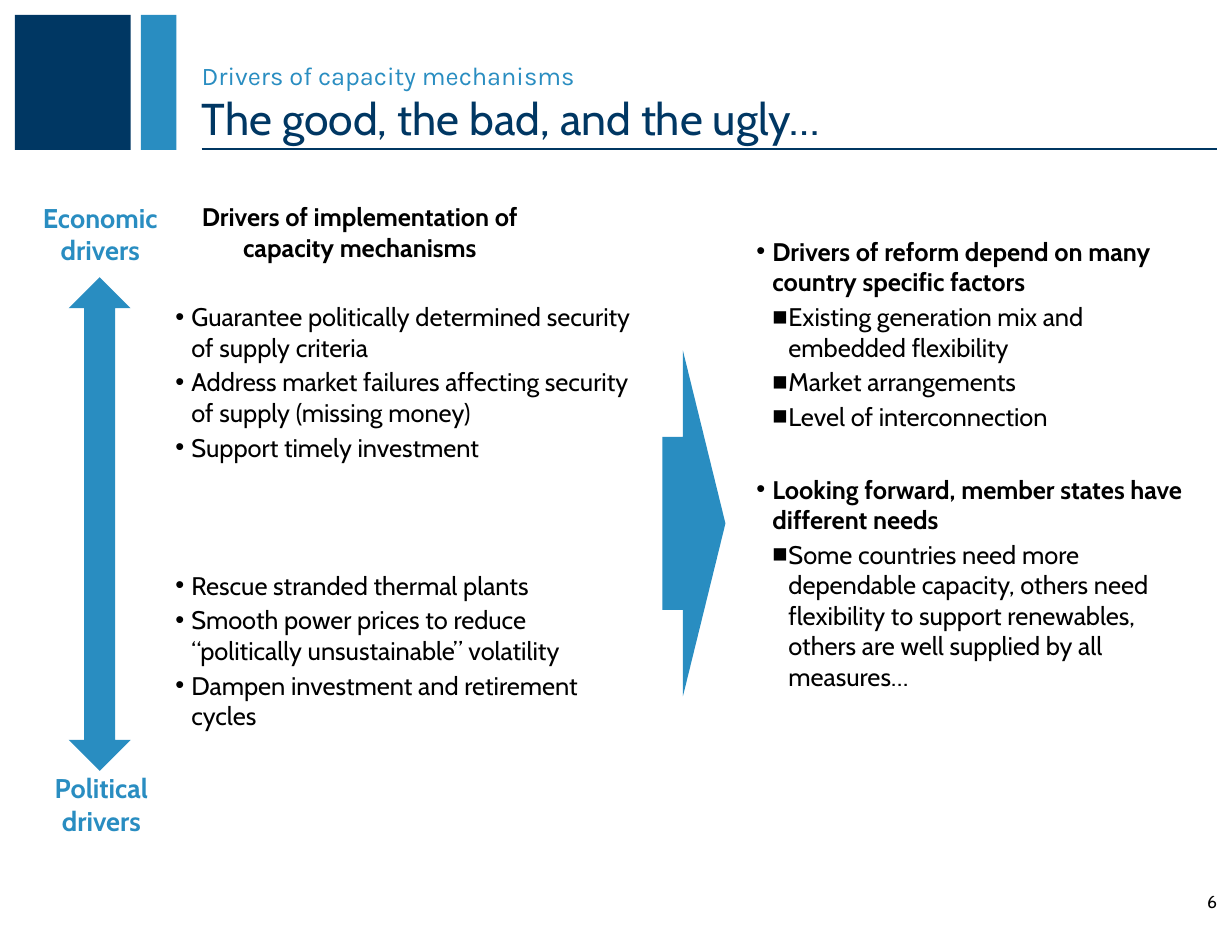
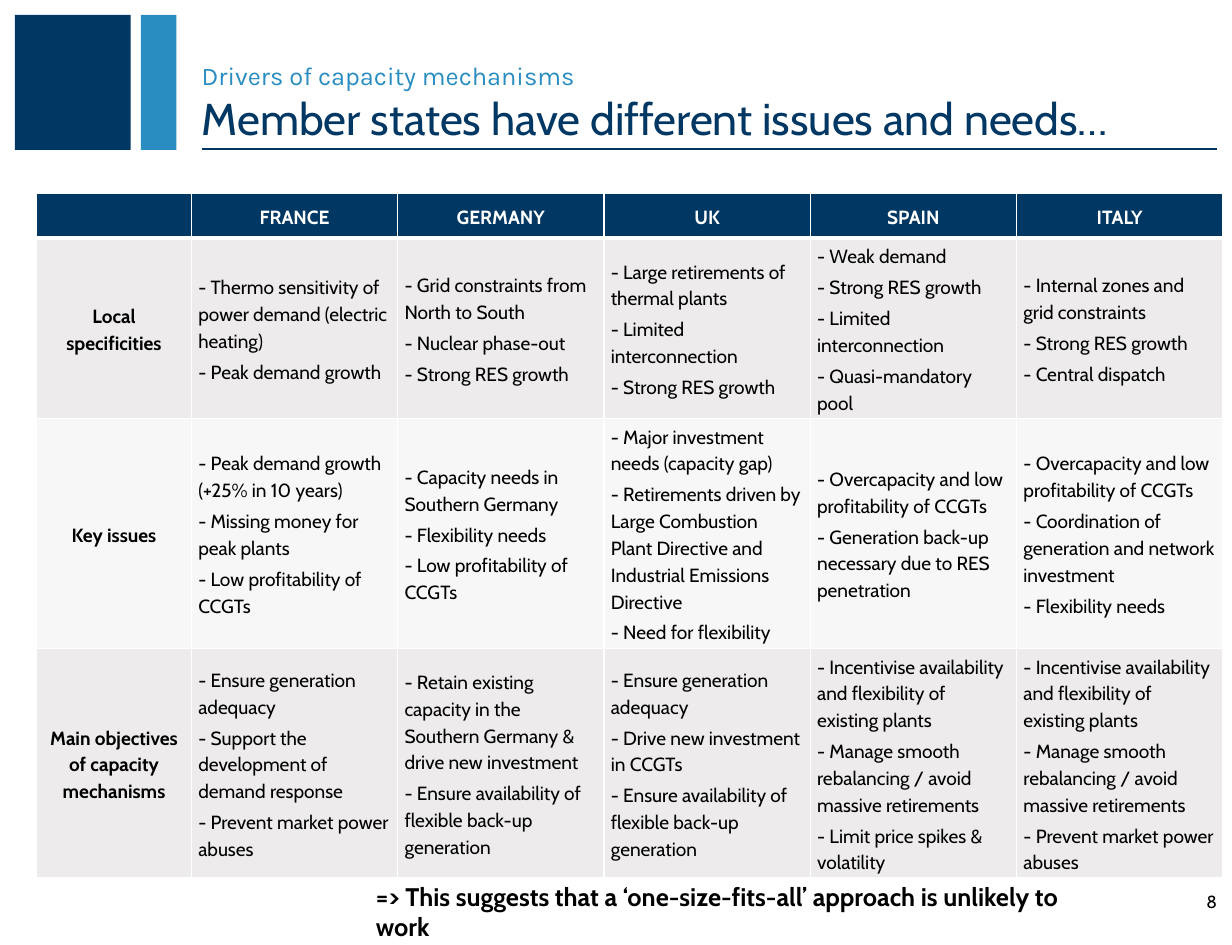
"""Build two slides on the drivers of capacity mechanisms."""
from dataclasses import dataclass

from lxml import etree
from pptx import Presentation
from pptx.dml.color import RGBColor
from pptx.enum import shapes, text
from pptx.oxml import ns
from pptx.util import Emu, Pt

PX = 9144


@dataclass(frozen=True)
class Theme:
    """Colours, fonts and type sizes."""
    navy: str = "003763"
    rule: str = "003661"
    blue: str = "298DC1"
    black: str = "000000"
    white: str = "FFFFFF"
    stripe: str = "D2CFCD"
    font: str = "Cabin"
    section_font: str = "Karla"
    title_size: int = 28
    label_size: int = 17
    body_size: int = 16
    table_size: int = 12
    number_size: int = 11
    gap: float = 2.6


THEME = Theme()
ALIGN, ANCHOR, SHAPE = text.PP_ALIGN, text.MSO_ANCHOR, shapes.MSO_SHAPE

SECTION = "Drivers of capacity mechanisms"
BANDS = [((13, 13, 101, 118), THEME.navy), ((123, 13, 31, 118), THEME.blue)]
TITLE_AREA = (176, 13, 886, 118)
NUMBER_AREA = (1020, 775, 42, 27)
INSETS = (11, 5, 11, 5)

DRIVERS_TITLE = "The good, the bad, and the ugly…"
DRIVERS_HEADING = "Drivers of implementation of capacity mechanisms"
HEADING_AREA = (144, 171, 340, 117)
POLES = [("Economic drivers", (16, 171, 143, 70)),
         ("Political drivers", (26, 669, 125, 70))]
ARROWS = [(SHAPE.UP_DOWN_ARROW, (60, 242, 54, 431), (0.5, 0.5)),
          (SHAPE.RIGHT_ARROW, (578, 306, 55, 302), (0.5, 0.675))]
# Each bullet: level, text, bold, space before
IMPLEMENTATION = [
    (0, "Guarantee politically determined security of supply criteria", False, 0),
    (0, "Address market failures affecting security of supply (missing money)", False, THEME.gap),
    (0, "Support timely investment", False, THEME.gap),
    (0, "Rescue stranded thermal plants", False, 67.6),
    (0, "Smooth power prices to reduce “politically unsustainable” volatility", False, THEME.gap),
    (0, "Dampen investment and retirement cycles", False, THEME.gap),
]
REFORM = [
    (0, "Drivers of reform depend on many country specific factors", True, 0),
    (1, "Existing generation mix and embedded flexibility", False, THEME.gap),
    (1, "Market arrangements", False, THEME.gap),
    (1, "Level of interconnection", False, THEME.gap),
    (0, "Looking forward, member states have different needs", True, 26.5),
    (1, "Some countries need more dependable capacity, others need flexibility to support "
        "renewables, others are well supplied by all measures…", False, THEME.gap),
]
BULLET_AREAS = [((153, 263, 401, 498), IMPLEMENTATION), ((660, 206, 388, 559), REFORM)]
BULLETS = "•■"

STATES_TITLE = "Member states have different issues and needs…"
STATES = [
    ("", ["FRANCE"], ["GERMANY"], ["UK"], ["SPAIN"], ["ITALY"]),
    ("Local specificities",
     ["- Thermo sensitivity of power demand (electric heating)", "- Peak demand growth"],
     ["- Grid constraints from North to South", "- Nuclear phase-out", "- Strong RES growth"],
     ["- Large retirements of thermal plants", "- Limited interconnection",
      "- Strong RES growth"],
     ["- Weak demand", "- Strong RES growth", "- Limited interconnection",
      "- Quasi-mandatory pool"],
     ["- Internal zones and grid constraints", "- Strong RES growth", "- Central dispatch"]),
    ("Key issues",
     ["- Peak demand growth (+25% in 10 years)", "- Missing money for peak plants",
      "- Low profitability of CCGTs"],
     ["- Capacity needs in Southern Germany", "- Flexibility needs",
      "- Low profitability of CCGTs"],
     ["- Major investment needs (capacity gap)",
      "- Retirements driven by Large Combustion Plant Directive and Industrial Emissions Directive",
      "- Need for flexibility"],
     ["- Overcapacity and low profitability of CCGTs",
      "- Generation back-up necessary due to RES penetration"],
     ["- Overcapacity and low profitability of CCGTs",
      "- Coordination of generation and network investment", "- Flexibility needs"]),
    ("Main objectives of capacity mechanisms",
     ["- Ensure generation adequacy", "- Support the development of demand response",
      "- Prevent market power abuses"],
     ["- Retain existing capacity in the Southern Germany & drive new investment",
      "- Ensure availability of flexible back-up generation"],
     ["- Ensure generation adequacy", "- Drive new investment in CCGTs",
      "- Ensure availability of flexible back-up generation"],
     ["- Incentivise availability and flexibility of existing plants",
      "- Manage smooth rebalancing / avoid massive retirements",
      "- Limit price spikes & volatility"],
     ["- Incentivise availability and flexibility of existing plants",
      "- Manage smooth rebalancing / avoid massive retirements",
      "- Prevent market power abuses"]),
]
TABLE_ORIGIN = (32, 169)
COLUMNS = [135] + [180] * 5
ROWS = [39, 156, 201, 200]
ROW_OPACITY = [100, 40, 15, 40]
CONCLUSION = "=> This suggests that a ‘one-size-fits-all’ approach is unlikely to work"
CONCLUSION_AREA = (328, 769, 640, 56)


def emu(lengths):
    return [Emu(length * PX) for length in lengths]


def rgb(colour):
    return RGBColor.from_string(colour)


def add_xml(parent, tag, **attributes):
    return etree.SubElement(parent, ns.qn(tag), attributes)


def format_text(para, size, colour=THEME.black, bold=False, font=THEME.font):
    for span in para.runs:
        span.font.name, span.font.size, span.font.bold = font, Pt(size), bold
        span.font.color.rgb = rgb(colour)


def set_frame(frame, insets, anchor=ANCHOR.TOP):
    frame.word_wrap, frame.auto_size = True, text.MSO_AUTO_SIZE.NONE
    frame.vertical_anchor = anchor
    (frame.margin_left, frame.margin_top,
     frame.margin_right, frame.margin_bottom) = emu(insets)


def place(holder, area):
    holder.left, holder.top, holder.width, holder.height = emu(area)


def add_text(page, words, area, size, colour=THEME.black, bold=True,
             align=ALIGN.CENTER, insets=INSETS, anchor=ANCHOR.TOP):
    frame = page.shapes.add_textbox(*emu(area)).text_frame
    set_frame(frame, insets, anchor)
    para = frame.paragraphs[0]
    para.text, para.alignment = words, align
    format_text(para, size, colour, bold)


def add_block(page, kind, area, colour):
    block = page.shapes.add_shape(kind, *emu(area))
    block.shadow.inherit = False
    block.fill.solid()
    block.fill.fore_color.rgb = rgb(colour)
    block.line.fill.background()
    return block


def add_page(deck, layout, title, number):
    page = deck.slides.add_slide(deck.slide_layouts.get_by_name(layout))
    for area, colour in BANDS:
        add_block(page, SHAPE.RECTANGLE, area, colour)
    rule = page.shapes.add_connector(shapes.MSO_CONNECTOR.STRAIGHT, *emu((176, 130, 1062, 130)))
    rule.line.color.rgb, rule.line.width = rgb(THEME.rule), Pt(1)
    add_xml(rule.element.spPr, "a:effectLst")
    holder = page.shapes.title
    place(holder, TITLE_AREA)
    frame = holder.text_frame
    set_frame(frame, (0, 5, 0, 5), ANCHOR.BOTTOM)
    frame.text = f"{SECTION}\n{title}"
    section, headline = frame.paragraphs
    section.alignment = headline.alignment = ALIGN.LEFT
    format_text(section, THEME.body_size, THEME.blue, font=THEME.section_font)
    format_text(headline, THEME.title_size, THEME.navy)
    add_text(page, number, NUMBER_AREA, THEME.number_size, bold=False,
             align=ALIGN.RIGHT, insets=(0, 0, 0, 3), anchor=ANCHOR.MIDDLE)
    return page


def fill_bullets(holder, area, items):
    place(holder, area)
    frame = holder.text_frame
    set_frame(frame, (0, 0, 0, 0))
    frame.text = "\n".join(item[1] for item in items)
    for para, (level, _, bold, before) in zip(frame.paragraphs, items):
        para.level = level
        properties = para._p.get_or_add_pPr()
        properties.set("marL", str(14 * (level + 1) * PX))
        properties.set("indent", str(-14 * PX))
        add_xml(properties, "a:buChar", char=BULLETS[level])
        para.space_before = Pt(before)
        format_text(para, THEME.body_size, bold=bold)


def style_cell(cell, row):
    properties = cell._tc.get_or_add_tcPr()
    widths = {"L": 1, "R": 1, "T": 3 if row == 1 else 1, "B": 3 if row == 0 else 1}
    for side, width in widths.items():
        border = add_xml(properties, f"a:ln{side}", w=str(Pt(width)))
        add_xml(add_xml(border, "a:solidFill"), "a:srgbClr", val=THEME.white)
    cell.fill.solid()
    cell.fill.fore_color.rgb = rgb(THEME.stripe if row else THEME.navy)
    if row:
        colour = properties.find(ns.qn("a:solidFill")).find(ns.qn("a:srgbClr"))
        add_xml(colour, "a:alpha", val=str(ROW_OPACITY[row] * 1000))
    cell.vertical_anchor = ANCHOR.MIDDLE
    cell.margin_left, cell.margin_top, cell.margin_right, cell.margin_bottom = emu((6, 3, 6, 3))


def fill_cell(cell, entries, heading, colour):
    cell.text_frame.text = "\n".join(entries)
    for index, para in enumerate(cell.text_frame.paragraphs):
        para.alignment = ALIGN.CENTER if heading else ALIGN.LEFT
        para.line_spacing = 1.15
        para.space_before = Pt(THEME.gap if index else 0)
        format_text(para, THEME.table_size, colour, heading)


def add_states_table(page):
    area = (*TABLE_ORIGIN, sum(COLUMNS), sum(ROWS))
    table = page.shapes.add_table(len(ROWS), len(COLUMNS), *emu(area)).table
    for column, width in zip(table.columns, emu(COLUMNS)):
        column.width = width
    for line, height in zip(table.rows, emu(ROWS)):
        line.height = height
    for row, (label, *lists) in enumerate(STATES):
        colour = THEME.black if row else THEME.white
        for column, entries in enumerate([[label], *lists]):
            cell = table.cell(row, column)
            style_cell(cell, row)
            fill_cell(cell, entries, row == 0 or column == 0, colour)


def build_drivers(deck):
    page = add_page(deck, "Two Content", DRIVERS_TITLE, "6")
    bodies = [holder for holder in page.placeholders if holder.placeholder_format.idx]
    for holder, (area, items) in zip(bodies, BULLET_AREAS):
        fill_bullets(holder, area, items)
    add_text(page, DRIVERS_HEADING, HEADING_AREA, THEME.body_size)
    for words, area in POLES:
        add_text(page, words, area, THEME.label_size, THEME.blue)
    for kind, area, adjustments in ARROWS:
        arrow = add_block(page, kind, area, THEME.blue)
        for index, value in enumerate(adjustments):
            arrow.adjustments[index] = value


def build_states(deck):
    page = add_page(deck, "Title Only", STATES_TITLE, "8")
    add_states_table(page)
    add_text(page, CONCLUSION, CONCLUSION_AREA, THEME.body_size,
             align=ALIGN.LEFT, insets=(0, 0, 0, 0))


def main():
    deck = Presentation()
    deck.slide_width, deck.slide_height = emu((1075, 825))
    build_drivers(deck)
    build_states(deck)
    deck.save("out.pptx")


if __name__ == "__main__":
    main()
